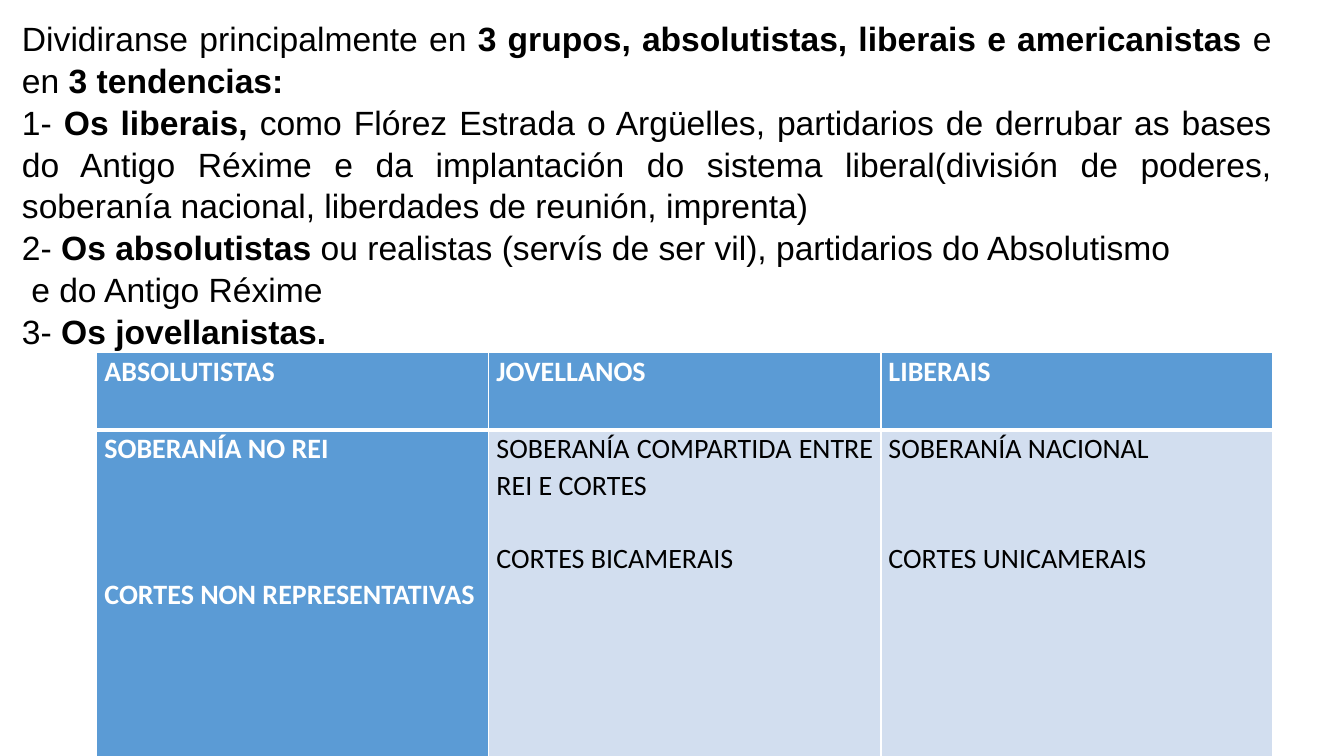
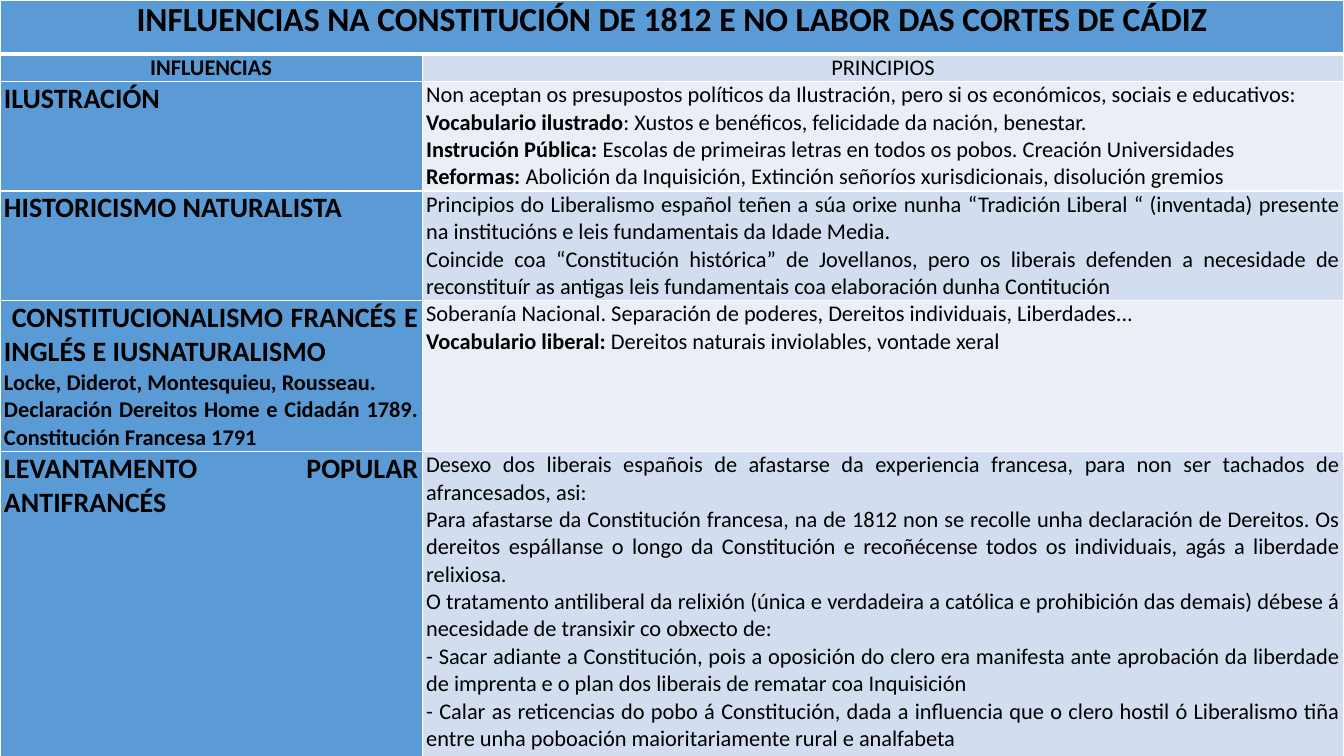
from dataclasses import dataclass
from typing import NamedTuple

from lxml.etree import SubElement
from pptx import Presentation
from pptx.dml.color import RGBColor
from pptx.enum.text import MSO_AUTO_SIZE, PP_ALIGN
from pptx.oxml.ns import qn
from pptx.util import Cm, Pt

COLORS = {
    "text": "000000",
    "white": "FFFFFF",
    "accent": "5B9BD5",
    "band_dark": "D2DEEF",
    "band_light": "EAEFF7",
}
BODY_FONT, TABLE_FONT = "Arial", "Calibri"
THIN_BORDER, HEADER_BORDER = 1, 3
BLANK_LINE = 26  # points taken by one 20 pt line of a table

SLIDE_WIDTH, SLIDE_HEIGHT = 33.87, 19.05
CONTENT_LAYOUT, BLANK_LAYOUT = 1, 6


class Paragraph(NamedTuple):
    """Text in which **double asterisks** enclose bold words."""
    text: str
    size: float = 16
    align: PP_ALIGN = PP_ALIGN.JUSTIFY
    space_before: float = 0
    color: str = "text"


@dataclass
class Grid:
    left: float
    top: float
    column_widths: list[float]
    row_heights: list[float]
    side_margin: float
    line_spacing: float
    rows: list[list[list[Paragraph]]]


def rgb(color: str) -> RGBColor:
    return RGBColor.from_string(COLORS[color])


def write_paragraphs(frame, paragraphs: list[Paragraph], font_name: str,
                     line_spacing: float) -> None:
    for index, content in enumerate(paragraphs):
        paragraph = frame.paragraphs[0] if index == 0 else frame.add_paragraph()
        properties = paragraph._p.get_or_add_pPr()
        properties.set("marL", "0")
        properties.set("indent", "0")
        SubElement(properties, qn("a:buNone"))
        paragraph.alignment = content.align
        paragraph.line_spacing = line_spacing
        paragraph.space_before = Pt(content.space_before)
        for part, text in enumerate(content.text.split("**")):
            if not text:
                continue
            run = paragraph.add_run()
            run.text = text
            run.font.name = font_name
            run.font.size = Pt(content.size)
            run.font.bold = part % 2 == 1
            run.font.color.rgb = rgb(content.color)


def set_borders(cell, row: int) -> None:
    """White lines, heavier between the first row and the second."""
    widths = {
        "lnL": THIN_BORDER,
        "lnR": THIN_BORDER,
        "lnT": HEADER_BORDER if row == 1 else THIN_BORDER,
        "lnB": HEADER_BORDER if row == 0 else THIN_BORDER,
    }
    properties = cell._tc.get_or_add_tcPr()
    for side, width in widths.items():
        line = SubElement(properties, qn(f"a:{side}"), w=str(Pt(width)))
        fill = SubElement(line, qn("a:solidFill"))
        SubElement(fill, qn("a:srgbClr"), val=COLORS["white"])


def cell_color(row: int, column: int) -> str:
    if row == 0 or column == 0:
        return "accent"
    return "band_dark" if row % 2 else "band_light"


def add_grid(slide, grid: Grid) -> None:
    """Draw the table; a row with one cell spans every column."""
    table = slide.shapes.add_table(
        len(grid.row_heights), len(grid.column_widths),
        Cm(grid.left), Cm(grid.top),
        Cm(sum(grid.column_widths)), Cm(sum(grid.row_heights))).table
    for column, width in zip(table.columns, grid.column_widths):
        column.width = Cm(width)
    for row, height in zip(table.rows, grid.row_heights):
        row.height = Cm(height)
    last_column = len(grid.column_widths) - 1
    for r, contents in enumerate(grid.rows):
        if len(contents) == 1:
            table.cell(r, 0).merge(table.cell(r, last_column))
        for c in range(last_column + 1):
            cell = table.cell(r, c)
            set_borders(cell, r)
            cell.fill.solid()
            cell.fill.fore_color.rgb = rgb(cell_color(r, c))
            cell.margin_left = cell.margin_right = Cm(grid.side_margin)
            cell.margin_top = cell.margin_bottom = Cm(0)
            if c < len(contents):
                write_paragraphs(cell.text_frame, contents[c],
                                 TABLE_FONT, grid.line_spacing)


def heading(text: str) -> Paragraph:
    return Paragraph(f"**{text}**", size=20)


def white_heading(text: str, blank_lines: int = 0) -> Paragraph:
    return Paragraph(f"**{text}**", 20, space_before=blank_lines * BLANK_LINE,
                     color="white")


def position(text: str, blank_lines: int = 0) -> Paragraph:
    return Paragraph(text, 20, space_before=blank_lines * BLANK_LINE)


def centered(text: str, size: float = 16) -> Paragraph:
    return Paragraph(text, size, PP_ALIGN.CENTER)


TENDENCIES = [Paragraph(text, size=24) for text in (
    "Dividiranse principalmente en **3 grupos, absolutistas, liberais e "
    "americanistas **e en **3 tendencias:**",
    "1- **Os liberais, **como Flórez Estrada o Argüelles, partidarios de "
    "derrubar as bases do Antigo Réxime e da implantación do sistema "
    "liberal(división de poderes, soberanía nacional, liberdades de reunión, "
    "imprenta) ",
    "2- **Os absolutistas **ou realistas (servís de ser vil), partidarios do "
    "Absolutismo",
    " e do Antigo Réxime ",
    "3- **Os jovellanistas.**",
)]

GROUPS = Grid(
    left=2.44, top=8.87, column_widths=[9.88] * 3, row_heights=[1.96, 8.23],
    side_margin=0.19, line_spacing=1.07,
    rows=[
        [[white_heading(name)]
         for name in ("ABSOLUTISTAS", "JOVELLANOS", "LIBERAIS")],
        [
            [white_heading("SOBERANÍA NO REI"),
             white_heading("CORTES NON REPRESENTATIVAS", blank_lines=3)],
            [position("SOBERANÍA COMPARTIDA ENTRE REI E CORTES"),
             position("CORTES BICAMERAIS", blank_lines=1)],
            [position("SOBERANÍA NACIONAL"),
             position("CORTES UNICAMERAIS", blank_lines=2)],
        ],
    ])

INFLUENCES = Grid(
    left=0, top=0, column_widths=[10.64, 23.23],
    row_heights=[1.36, 0.67, 2.7, 2.75, 3.64, 7.92],
    side_margin=0.1, line_spacing=1,
    rows=[
        [[centered("**INFLUENCIAS NA CONSTITUCIÓN DE 1812 E NO LABOR DAS "
                   "CORTES DE CÁDIZ**", 24)]],
        [[centered("**INFLUENCIAS**")], [centered("PRINCIPIOS")]],
        [
            [heading("ILUSTRACIÓN")],
            [Paragraph("Non aceptan os presupostos políticos da Ilustración, "
                       "pero si os económicos, sociais e educativos:"),
             Paragraph("**Vocabulario ilustrado**: Xustos e benéficos, "
                       "felicidade da nación, benestar."),
             Paragraph("**Instrución Pública: **Escolas de primeiras letras "
                       "en todos os pobos. Creación Universidades"),
             Paragraph("**Reformas: **Abolición da Inquisición, Extinción "
                       "señoríos xurisdicionais, disolución gremios")],
        ],
        [
            [heading("HISTORICISMO NATURALISTA")],
            [Paragraph("Principios do Liberalismo español teñen a súa orixe "
                       "nunha “Tradición Liberal “ (inventada) presente na "
                       "institucións e leis fundamentais da Idade Media."),
             Paragraph("Coincide coa “Constitución histórica” de Jovellanos, "
                       "pero os liberais defenden a necesidade de "
                       "reconstituír as antigas leis fundamentais coa "
                       "elaboración dunha Contitución")],
        ],
        [
            [heading(" CONSTITUCIONALISMO FRANCÉS E INGLÉS E "
                     "IUSNATURALISMO"),
             Paragraph("**Locke, Diderot, Montesquieu, Rousseau.**"),
             Paragraph("**Declaración Dereitos Home e Cidadán 1789. "
                       "Constitución Francesa 1791**")],
            [Paragraph("Soberanía Nacional. Separación de poderes, Dereitos "
                       "individuais, Liberdades..."),
             Paragraph("**Vocabulario liberal: **Dereitos naturais "
                       "inviolables, vontade xeral")],
        ],
        [
            [heading("LEVANTAMENTO POPULAR ANTIFRANCÉS")],
            [Paragraph("Desexo dos liberais españois de afastarse da "
                       "experiencia francesa, para non ser tachados de "
                       "afrancesados, asi:"),
             Paragraph("Para afastarse da Constitución francesa, na de 1812 "
                       "non se recolle unha declaración de Dereitos. Os "
                       "dereitos espállanse o longo da Constitución e "
                       "recoñécense todos os individuais, agás a liberdade "
                       "relixiosa. "),
             Paragraph("O tratamento antiliberal da relixión (única e "
                       "verdadeira a católica e prohibición das demais) "
                       "débese á necesidade de transixir co obxecto de:"),
             Paragraph("- Sacar adiante a Constitución, pois a oposición do "
                       "clero era manifesta ante aprobación da liberdade de "
                       "imprenta e o plan dos liberais de rematar coa "
                       "Inquisición"),
             Paragraph("- Calar as reticencias do pobo á Constitución, dada "
                       "a influencia que o clero hostil ó Liberalismo tiña "
                       "entre unha poboación maioritariamente rural e "
                       "analfabeta")],
        ],
    ])


def add_tendencies_slide(deck) -> None:
    slide = deck.slides.add_slide(deck.slide_layouts[CONTENT_LAYOUT])
    unused_title = slide.shapes.title.element
    unused_title.getparent().remove(unused_title)
    tendencies = slide.placeholders[1]
    tendencies.left, tendencies.top = Cm(0.3), Cm(0.28)
    tendencies.width, tendencies.height = Cm(32), Cm(8.46)
    frame = tendencies.text_frame
    frame.word_wrap = True
    frame.auto_size = MSO_AUTO_SIZE.NONE
    write_paragraphs(frame, TENDENCIES, BODY_FONT, line_spacing=1.04)
    add_grid(slide, GROUPS)


def add_influences_slide(deck) -> None:
    slide = deck.slides.add_slide(deck.slide_layouts[BLANK_LAYOUT])
    add_grid(slide, INFLUENCES)


def main() -> None:
    deck = Presentation()
    deck.slide_width, deck.slide_height = Cm(SLIDE_WIDTH), Cm(SLIDE_HEIGHT)
    add_tendencies_slide(deck)
    add_influences_slide(deck)
    deck.save("out.pptx")


if __name__ == "__main__":
    main()
